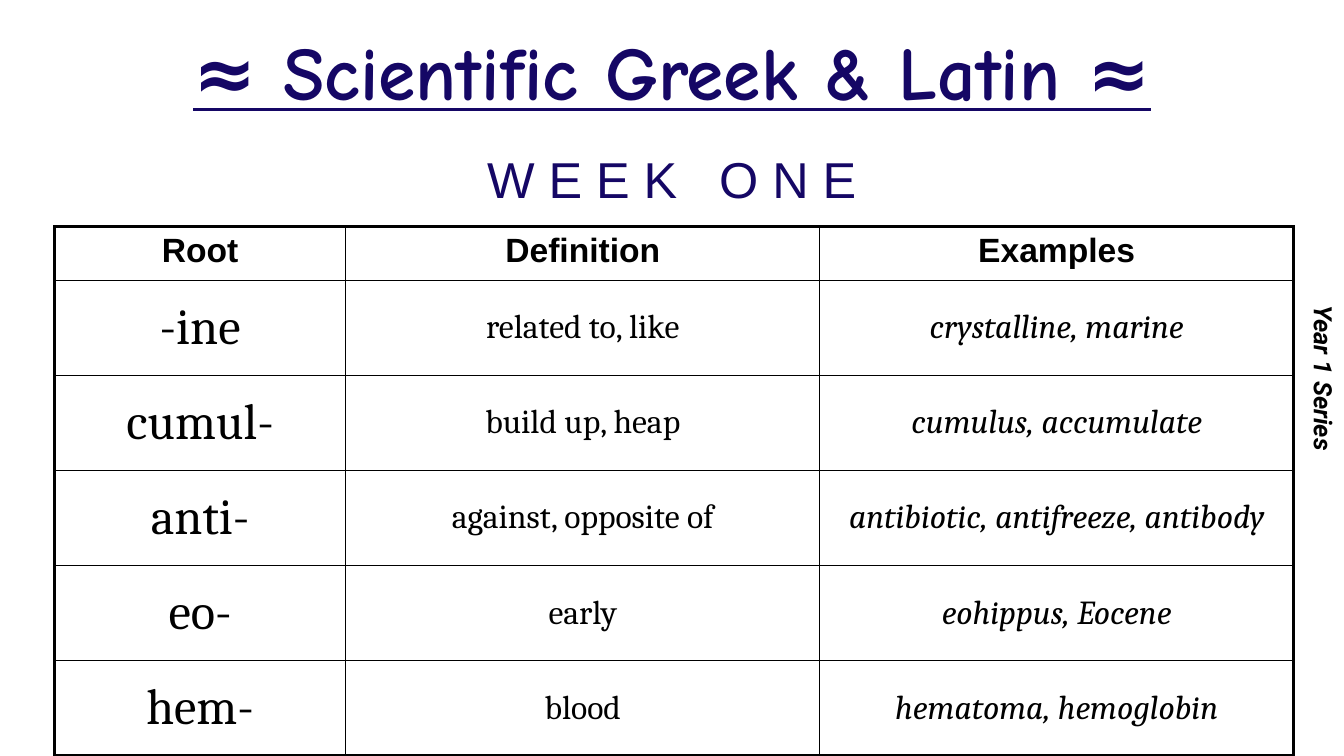
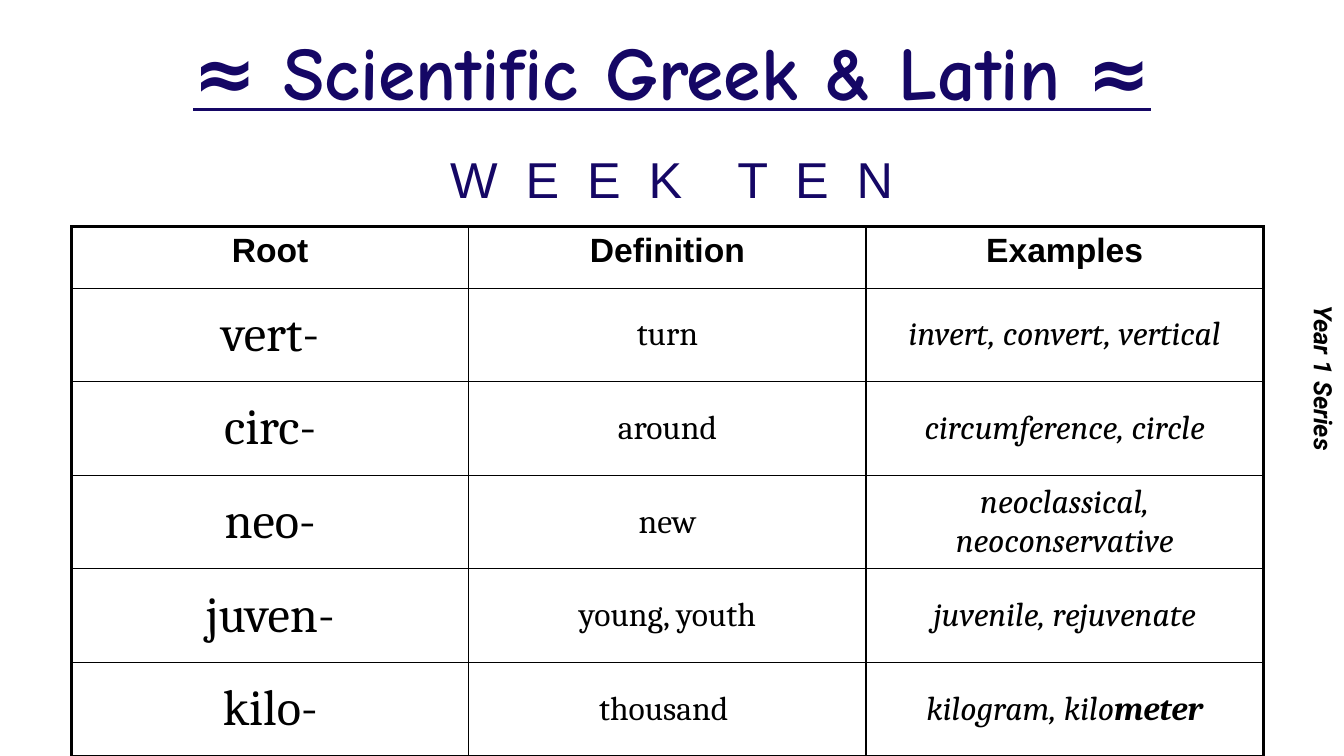
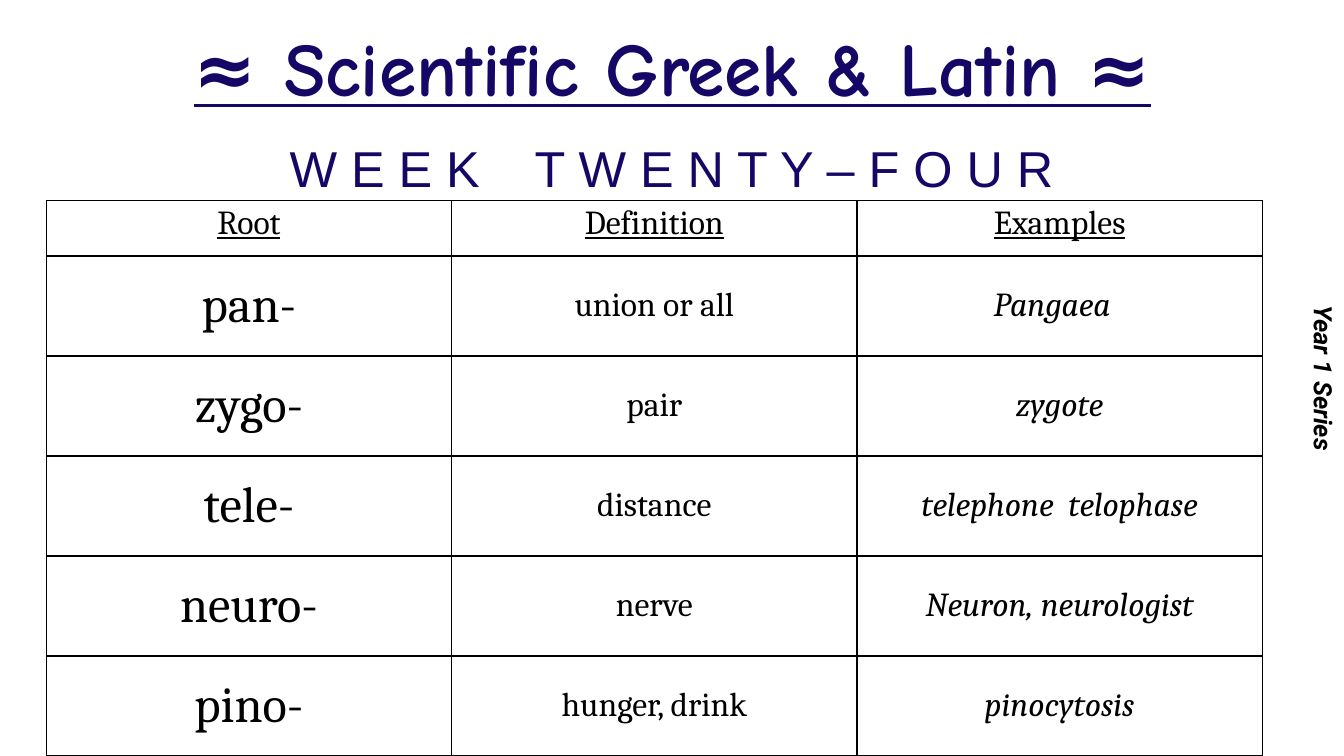
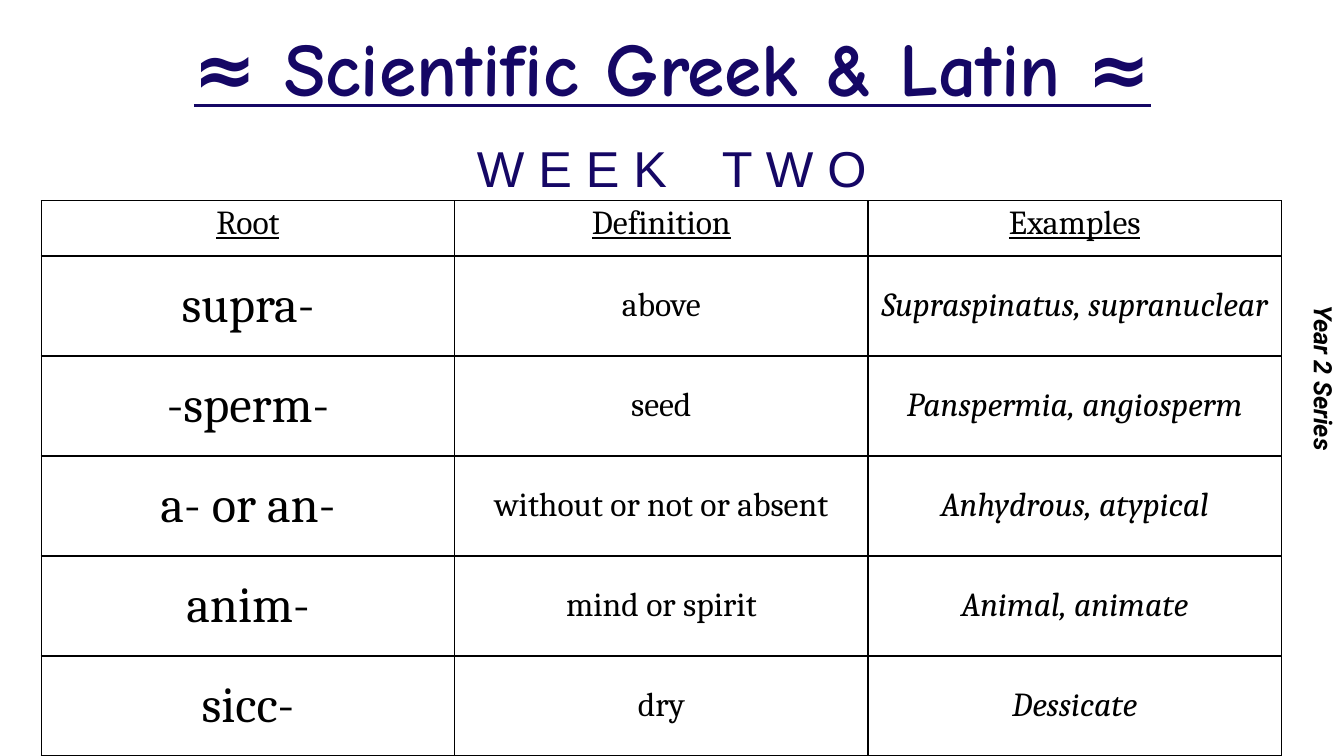
from dataclasses import dataclass

from pptx import Presentation
from pptx.dml.color import RGBColor
from pptx.enum.text import MSO_ANCHOR, MSO_AUTO_SIZE, PP_ALIGN
from pptx.oxml.ns import qn
from pptx.util import Inches, Pt
from lxml.etree import SubElement


@dataclass(frozen=True)
class Theme:
    navy: str = "150765"
    black: str = "000000"
    white: str = "FFFFFF"
    title_font: str = "Comic Neue"
    sans: str = "Arial"
    serif: str = "Cambria"
    series_font: str = "Roboto"
    title_size: int = 54
    large: int = 36
    normal: int = 24
    small: int = 18
    thin: float = 1
    thick: float = 2.25


THEME = Theme()
WIDTH, HEIGHT = 13.33, 7.5
SERIES_WIDTH = 0.5
TITLE = "≈ Scientific Greek & Latin ≈"
HEADINGS = ("Root", "Definition", "Examples")

BOXED = {
    "title_box": (0, 0, WIDTH, 1.5), "title_fill": True,
    "week_top": 1.42, "table_top": 2.25, "frame": THEME.thick,
    "heading": {"font": THEME.sans, "bold": True}, "heading_inset": (0.1, 0.05),
}
RULED = {
    "title_box": (1.67, 0, 10, 1.42), "title_fill": False,
    "week_top": 1.31, "table_top": 1.99, "frame": THEME.thin,
    "heading": {"font": THEME.serif, "underline": True}, "heading_inset": (0.07, 0.04),
}

WEEKS = [
    {
        "style": BOXED, "series": "Year 1 Series",
        "week": ("WEEK", "ONE"), "letter_gap": 1, "word_gap": 3, "week_width": 10,
        "left": 0.54, "columns": (2.89, 4.7, 4.7), "heading_height": 0.53, "cell_fill": True,
        "roots": [
            ("-ine", "related to, like", "crystalline, marine"),
            ("cumul-", "build up, heap", "cumulus, accumulate"),
            ("anti-", "against, opposite of", "antibiotic, antifreeze, antibody"),
            ("eo-", "early", "eohippus, Eocene"),
            ("hem-", "blood", "hematoma, hemoglobin"),
        ],
    },
    {
        "style": BOXED, "series": "Year 1 Series",
        "week": ("WEEK", "TEN"), "letter_gap": 2, "word_gap": 4, "week_width": 9.5,
        "left": 0.71, "columns": (3.94,) * 3, "heading_height": 0.61, "cell_fill": False,
        "roots": [
            ("vert-", "turn", "invert, convert, vertical"),
            ("circ-", "around", "circumference, circle"),
            ("neo-", "new", "neoclassical, neoconservative"),
            ("juven-", "young, youth", "juvenile, rejuvenate"),
            ("kilo-", "thousand ", "kilogram, kilo*meter"),
        ],
    },
    {
        "style": RULED, "series": "Year 1 Series",
        "week": ("WEEK", "TWENTY–FOUR"), "letter_gap": 1, "word_gap": 4, "week_width": 10,
        "left": 0.46, "columns": (4.02,) * 3, "heading_height": 0.55, "cell_fill": False,
        "roots": [
            ("pan-", "union or all", "Pangaea  "),
            ("zygo-", "pair", "zygote"),
            ("tele-", "distance", "telephone  telophase"),
            ("neuro-", "nerve", "Neuron, neurologist"),
            ("pino-", "hunger, drink", "pinocytosis"),
        ],
    },
    {
        "style": RULED, "series": "Year 2 Series",
        "week": ("WEEK", "TWO"), "letter_gap": 1, "word_gap": 4, "week_width": 10,
        "left": 0.41, "columns": (4.1,) * 3, "heading_height": 0.55, "cell_fill": False,
        "roots": [
            ("supra-", "above", "Supraspinatus, supranuclear"),
            ("-sperm-", "seed", "Panspermia, angiosperm"),
            ("a- or an-", "without or not or absent", "Anhydrous, atypical"),
            ("anim-", "mind or spirit", "Animal, animate"),
            ("sicc-", "dry", "Dessicate"),
        ],
    },
]

COLUMN_FORMATS = (
    {"size": THEME.large},
    {"size": THEME.normal},
    {"size": THEME.normal, "italic": True},
)


def write(frame, text, *, size, font=THEME.serif, color=THEME.black, bold=False,
          italic=False, underline=False, before=None, line=None):
    paragraph = frame.paragraphs[0]
    paragraph.alignment = PP_ALIGN.CENTER
    if line:
        paragraph.line_spacing = line
    if before:
        spacing = SubElement(paragraph._p.get_or_add_pPr(), qn("a:spcBef"))
        SubElement(spacing, qn("a:spcPct")).set("val", str(before * 1000))
    for index, part in enumerate(text.split("*")):
        run = paragraph.add_run()
        run.text = part
        run.font.size = Pt(size)
        run.font.name = font
        run.font.color.rgb = RGBColor.from_string(color)
        run.font.bold = bold or index % 2 == 1
        run.font.italic = italic
        run.font.underline = underline


def paint(fill, solid):
    if solid:
        fill.solid()
        fill.fore_color.rgb = RGBColor.from_string(THEME.white)
    else:
        fill.background()


def add_title(slide, style):
    title = slide.shapes.title
    title.left, title.top, title.width, title.height = map(Inches, style["title_box"])
    paint(title.fill, style["title_fill"])
    title.text_frame.auto_size = MSO_AUTO_SIZE.NONE
    title.text_frame.vertical_anchor = MSO_ANCHOR.MIDDLE
    write(title.text_frame, TITLE, size=THEME.title_size, font=THEME.title_font,
          color=THEME.navy, bold=True, underline=True, line=0.9)


def add_label(slide, text, box, vertical=False, **text_format):
    frame = slide.shapes.add_textbox(*map(Inches, box)).text_frame
    frame.word_wrap = True
    frame.auto_size = MSO_AUTO_SIZE.SHAPE_TO_FIT_TEXT
    if vertical:
        frame._txBody.bodyPr.set("vert", "vert")
    write(frame, text, **text_format)


def add_borders(cell, widths):
    properties = cell._tc.get_or_add_tcPr()
    for side in "LRTB":
        border = SubElement(properties, qn(f"a:ln{side}"))
        border.set("w", str(Pt(widths[side])))
        color = SubElement(SubElement(border, qn("a:solidFill")), qn("a:srgbClr"))
        color.set("val", THEME.black)


def add_roots(slide, week):
    style = week["style"]
    entries = [HEADINGS, *week["roots"]]
    last_row, last_column = len(entries) - 1, len(HEADINGS) - 1
    height = HEIGHT - style["table_top"]
    table = slide.shapes.add_table(
        len(entries), len(HEADINGS), Inches(week["left"]), Inches(style["table_top"]),
        Inches(sum(week["columns"])), Inches(height)).table
    table.horz_banding = False
    for column, width in zip(table.columns, week["columns"]):
        column.width = Inches(width)
    root_height = (height - week["heading_height"]) / last_row
    for r, entry in enumerate(entries):
        table.rows[r].height = Inches(root_height if r else week["heading_height"])
        for c, text in enumerate(entry):
            cell = table.cell(r, c)
            edges = {"L": c == 0, "R": c == last_column, "T": r == 0, "B": r == last_row}
            add_borders(cell, {side: style["frame"] if outer else THEME.thin
                               for side, outer in edges.items()})
            paint(cell.fill, week["cell_fill"])
            across, down = (0.1, 0.05) if r else style["heading_inset"]
            cell.margin_left = cell.margin_right = Inches(across)
            cell.margin_top = cell.margin_bottom = Inches(down)
            cell.vertical_anchor = MSO_ANCHOR.MIDDLE if r else MSO_ANCHOR.TOP
            text_format = COLUMN_FORMATS[c] if r else {"size": THEME.normal, **style["heading"]}
            write(cell.text_frame, text, before=20, **text_format)


def add_week(deck, week):
    slide = deck.slides.add_slide(deck.slide_layouts[5])
    add_title(slide, week["style"])
    spaced_words = [(" " * week["letter_gap"]).join(word) for word in week["week"]]
    width = week["week_width"]
    add_label(slide, (" " * week["word_gap"]).join(spaced_words),
              ((WIDTH - width) / 2, week["style"]["week_top"], width, 0.71),
              size=THEME.large, font=THEME.sans, color=THEME.navy, before=50)
    add_roots(slide, week)
    add_label(slide, week["series"], (WIDTH - SERIES_WIDTH, 0, SERIES_WIDTH, HEIGHT),
              vertical=True, size=THEME.small, font=THEME.series_font, bold=True, italic=True)


def main():
    deck = Presentation()
    deck.slide_width, deck.slide_height = Inches(WIDTH), Inches(HEIGHT)
    for week in WEEKS:
        add_week(deck, week)
    deck.save("out.pptx")


if __name__ == "__main__":
    main()
